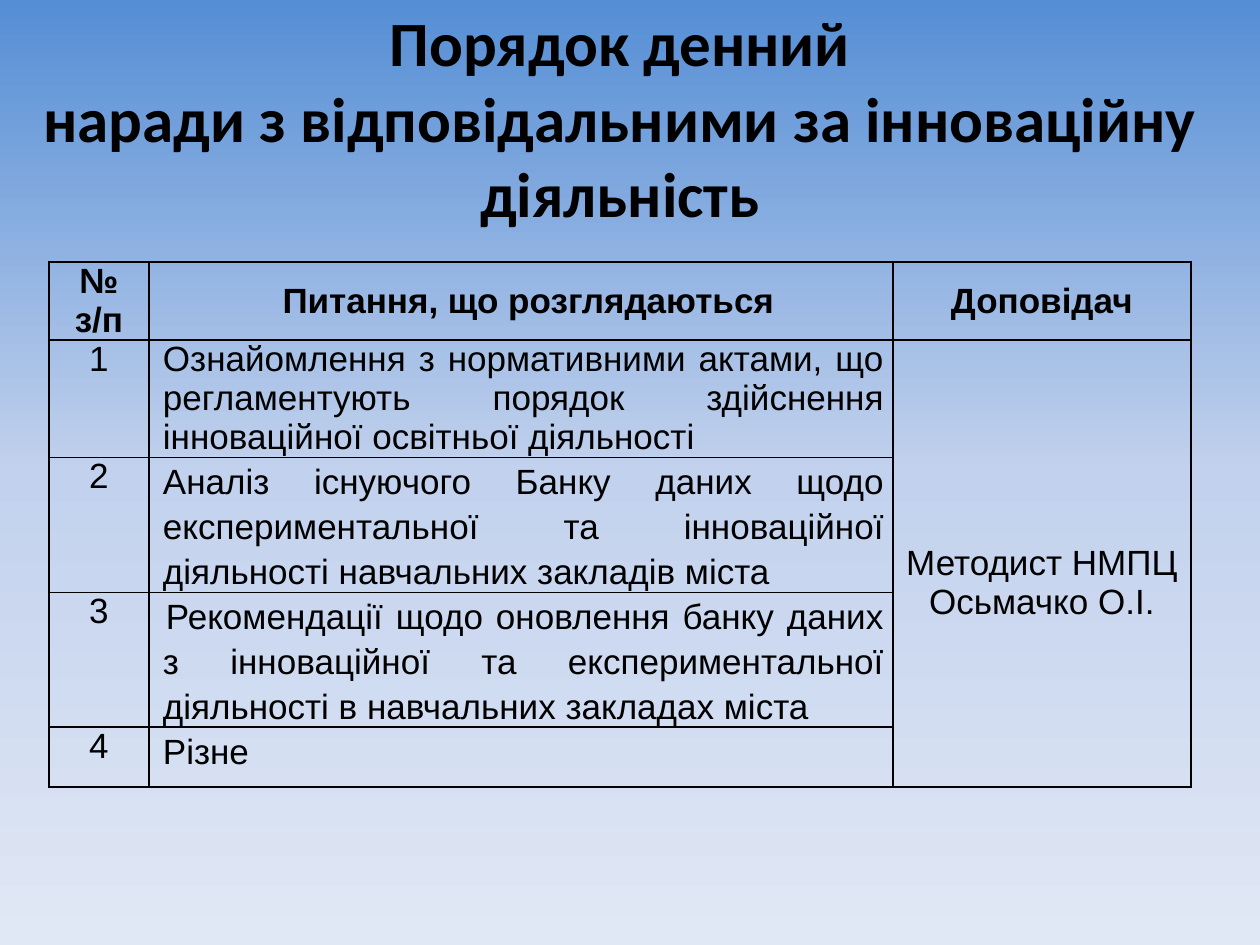
from copy import deepcopy

from lxml import etree
from pptx import Presentation
from pptx.dml.color import RGBColor
from pptx.enum.text import MSO_ANCHOR, PP_ALIGN
from pptx.oxml.ns import qn
from pptx.util import Pt

PX = 914400 // 126
CENTER, JUSTIFY = PP_ALIGN.CENTER, PP_ALIGN.JUSTIFY
TOP, MIDDLE = MSO_ANCHOR.TOP, MSO_ANCHOR.MIDDLE
BLACK = "000000"

TITLE = "Порядок денний\vнаради з відповідальними за інноваційну діяльність"
HEADERS = ["№\nз/п", "Питання, що розглядаються", "Доповідач"]
SPEAKER = "Методист НМПЦ Осьмачко О.І."
# Question, line spacing, first-line indent in px
QUESTIONS = [
    ("Ознайомлення з нормативними актами, що регламентують порядок "
     "здійснення інноваційної освітньої діяльності", 1.0, 0),
    ("Аналіз існуючого Банку даних щодо експериментальної та інноваційної "
     "діяльності навчальних закладів міста", 1.15, 0),
    ("Рекомендації щодо оновлення банку даних з інноваційної та "
     "експериментальної діяльності в навчальних закладах міста", 1.15, 3),
    ("Різне", 1.15, 0),
]
COL_WIDTHS = [100, 744, 298]
ROW_HEIGHTS = [78, 117, 135, 135, 60]


def px(n):
    return n * PX


def rgb(color):
    return RGBColor.from_string(color)


def set_font(p, name, size, bold):
    p.font.name, p.font.size, p.font.bold = name, Pt(size), bold
    p.font.color.rgb = rgb(BLACK)


def paint_background(s, colors):
    """Fill with evenly spaced colours from top to bottom."""
    fill = s.background.fill
    fill.gradient()
    fill.gradient_angle = 270
    first = s._element.find(".//" + qn("a:gs"))
    first.addnext(deepcopy(first))
    for i, (stop, color) in enumerate(zip(fill.gradient_stops, colors)):
        stop.color.rgb = rgb(color)
        stop.position = i / (len(colors) - 1)


def add_title(s, x, y, w, h):
    sp = s.shapes.title
    sp.left, sp.top, sp.width, sp.height = map(px, (x, y, w, h))
    tf = sp.text_frame
    tf.text = TITLE
    tf.word_wrap = True
    tf.vertical_anchor = MIDDLE
    p = tf.paragraphs[0]
    p.alignment = CENTER
    set_font(p, "Calibri", 36, True)


def set_borders(cell):
    tcPr = cell._tc.get_or_add_tcPr()
    for i, side in enumerate(("lnL", "lnR", "lnT", "lnB")):
        ln = etree.Element(qn("a:" + side), w=str(Pt(1)))
        fill = etree.SubElement(ln, qn("a:solidFill"))
        etree.SubElement(fill, qn("a:srgbClr"), val=BLACK)
        tcPr.insert(i, ln)


def fill_cell(cell, text, align=CENTER, anchor=TOP, bold=False,
              spacing=1.0, left=0, indent=0):
    cell.text = text
    cell.vertical_anchor = anchor
    for p in cell.text_frame.paragraphs:
        p.alignment = align
        p.line_spacing = spacing
        set_font(p, "Arial", 20, bold)
        pPr = p._p.get_or_add_pPr()
        pPr.set("marL", str(px(left)))
        pPr.set("indent", str(px(indent)))


def add_agenda(s, x, y):
    w, h = sum(COL_WIDTHS), sum(ROW_HEIGHTS)
    table = s.shapes.add_table(len(ROW_HEIGHTS), len(COL_WIDTHS),
                               px(x), px(y), px(w), px(h)).table
    table.first_row = table.horz_banding = False
    for col, width in zip(table.columns, COL_WIDTHS):
        col.width = px(width)
    for row, height in zip(table.rows, ROW_HEIGHTS):
        row.height = px(height)
    for cell in table.iter_cells():
        cell.fill.background()
        cell.margin_left = cell.margin_right = px(9)
        cell.margin_top = cell.margin_bottom = 0
        set_borders(cell)

    for i, header in enumerate(HEADERS):
        fill_cell(table.cell(0, i), header, anchor=MIDDLE, bold=True,
                  left=15 if i == 1 else 0)
    for i, (question, spacing, indent) in enumerate(QUESTIONS, 1):
        fill_cell(table.cell(i, 0), str(i))
        fill_cell(table.cell(i, 1), question, align=JUSTIFY,
                  spacing=spacing, left=5, indent=indent)
    speaker = table.cell(1, 2)
    speaker.merge(table.cell(len(QUESTIONS), 2))
    fill_cell(speaker, SPEAKER, anchor=MIDDLE)
    speaker.margin_top = px(39)


def main():
    prs = Presentation()
    prs.slide_width, prs.slide_height = px(1260), px(945)
    s = prs.slides.add_slide(prs.slide_layouts[5])
    paint_background(s, ["558ED5", "C2D1ED", "E1E8F5"])
    add_title(s, 0, 38, 1240, 158)
    add_agenda(s, 49, 262)
    prs.save("out.pptx")


if __name__ == "__main__":
    main()
